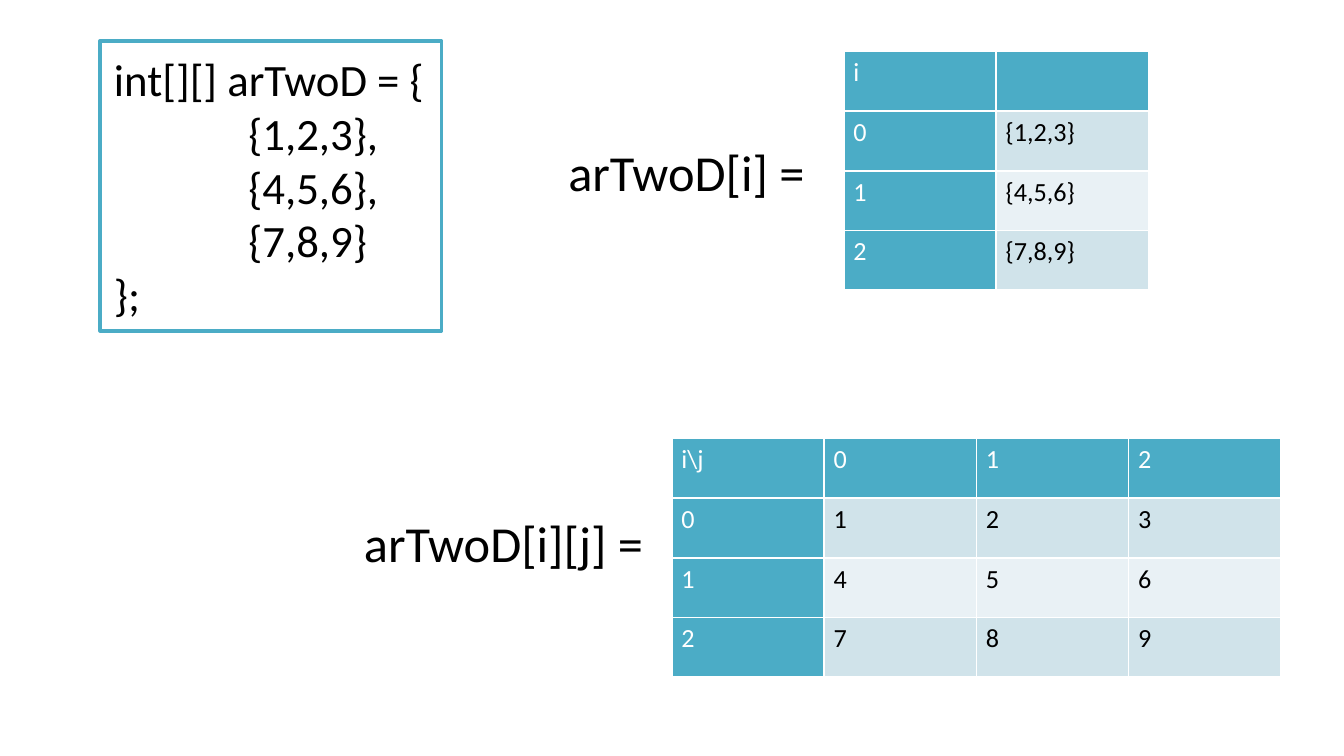
import pptx
import pptx.dml.color
import pptx.enum.shapes
import pptx.enum.text
import pptx.oxml.ns
import pptx.util
from lxml import etree

RGBColor = pptx.dml.color.RGBColor
TEAL = RGBColor(0x4B, 0xAC, 0xC6)
BAND_DARK = RGBColor(0xD0, 0xE3, 0xEA)
BAND_LIGHT = RGBColor(0xE9, 0xF1, 0xF5)
WHITE = RGBColor(0xFF, 0xFF, 0xFF)
BLACK = RGBColor(0, 0, 0)

MATRIX = [[1, 2, 3], [4, 5, 6], [7, 8, 9]]
ROW_LITERALS = ["{" + ",".join(map(str, row)) + "}" for row in MATRIX]


def add_element(parent, name, **attributes):
    return etree.SubElement(parent, pptx.oxml.ns.qn(name), **attributes)


class SlidePainter:
    """Places elements on a grid of 100 columns by 100 rows."""

    font_name = "Calibri"
    cell_width = 11.33
    cell_height = 7.9
    tab_stop = pptx.util.Inches(1)

    def __init__(self, deck):
        self.column = deck.slide_width / 100
        self.row = deck.slide_height / 100
        self.slide = deck.slides.add_slide(deck.slide_layouts[6])

    def place(self, left, top, width, height):
        return (round(left * self.column), round(top * self.row),
                round(width * self.column), round(height * self.row))

    def style(self, para, size, color):
        para.font.name = self.font_name
        para.font.size = pptx.util.Pt(size)
        para.font.color.rgb = color

    def frame(self, *area):
        kind = pptx.enum.shapes.MSO_SHAPE.RECTANGLE
        shape = self.slide.shapes.add_shape(kind, *self.place(*area))
        shape.shadow.inherit = False
        shape.fill.background()
        shape.line.color.rgb = TEAL
        shape.line.width = pptx.util.Pt(2)

    def text(self, lines, size, *area):
        box = self.slide.shapes.add_textbox(*self.place(*area))
        box.text_frame.word_wrap = False
        box.text_frame.auto_size = pptx.enum.text.MSO_AUTO_SIZE.SHAPE_TO_FIT_TEXT
        box.text_frame.text = "\n".join(lines)
        for para in box.text_frame.paragraphs:
            if para.text.startswith("\t"):
                stops = add_element(para._p.get_or_add_pPr(), "a:tabLst")
                add_element(stops, "a:tab", pos=str(self.tab_stop), algn="l")
            self.style(para, size, BLACK)

    def borders(self, cell):
        properties = cell._tc.get_or_add_tcPr()
        for side in "LRTB":
            line = add_element(properties, f"a:ln{side}", w=str(pptx.util.Pt(1)))
            fill = add_element(line, "a:solidFill")
            add_element(fill, "a:srgbClr", val=str(WHITE))

    def table(self, rows, left, top):
        row_count, column_count = len(rows), len(rows[0])
        area = self.place(left, top, column_count * self.cell_width,
                          row_count * self.cell_height)
        table = self.slide.shapes.add_table(row_count, column_count, *area).table
        for r, values in enumerate(rows):
            for c, value in enumerate(values):
                cell = table.cell(r, c)
                heading = r == 0 or c == 0
                band = BAND_DARK if r % 2 else BAND_LIGHT
                self.borders(cell)
                cell.fill.solid()
                cell.fill.fore_color.rgb = TEAL if heading else band
                cell.margin_left = cell.margin_right = pptx.util.Inches(0.07)
                cell.margin_top = cell.margin_bottom = pptx.util.Inches(0.04)
                cell.text = str(value)
                self.style(cell.text_frame.paragraphs[0], 14,
                           WHITE if heading else BLACK)


def main():
    deck = pptx.Presentation()
    deck.slide_width = pptx.util.Inches(10)
    deck.slide_height = deck.slide_width * 9 // 16
    painter = SlidePainter(deck)

    # Array declaration
    painter.frame(7.45, 5.45, 25.4, 38.3)
    declaration = ["int[][] arTwoD = {",
                   *("\t" + literal + "," for literal in ROW_LITERALS[:-1]),
                   "\t" + ROW_LITERALS[-1],
                   "};"]
    painter.text(declaration, 24, 7.5, 6, 25.3, 37.7)

    # Every element by row and column
    element_rows = [[i, *row] for i, row in enumerate(MATRIX)]
    painter.table([["i\\j", 0, 1, 2], *element_rows], 50, 58)
    painter.text(["arTwoD[i][j] ="], 27, 26.1, 66.9, 23, 10)

    # Each row as an array
    painter.table([["i", ""], *enumerate(ROW_LITERALS)], 62.8, 6.8)
    painter.text(["arTwoD[i] ="], 27, 41.3, 17.8, 19.8, 10)

    deck.save("out.pptx")


if __name__ == "__main__":
    main()
